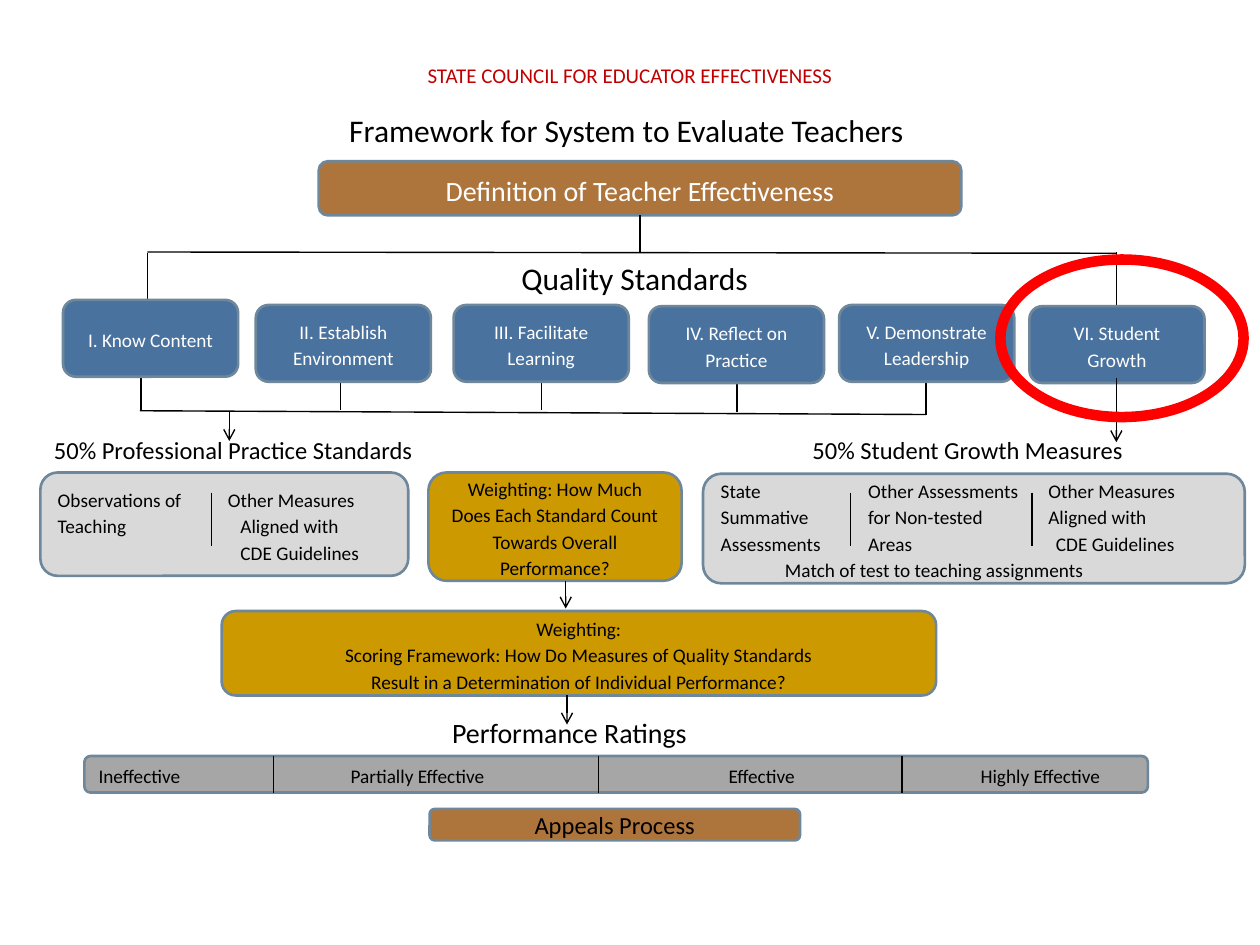
from lxml.etree import SubElement
from pptx import Presentation
from pptx.dml.color import RGBColor
from pptx.enum.shapes import MSO_CONNECTOR, MSO_SHAPE
from pptx.enum.text import MSO_ANCHOR, PP_ALIGN
from pptx.oxml.ns import qn
from pptx.util import Inches, Pt

BLACK = RGBColor(0x00, 0x00, 0x00)
WHITE = RGBColor(0xFF, 0xFF, 0xFF)
CRIMSON = RGBColor(0xC0, 0x00, 0x00)
RED = RGBColor(0xFF, 0x00, 0x00)
BROWN = RGBColor(0xAD, 0x74, 0x3B)
BLUE = RGBColor(0x4A, 0x72, 0x9E)
GOLD = RGBColor(0xCC, 0x99, 0x00)
PALE_GRAY = RGBColor(0xD9, 0xD9, 0xD9)
GRAY = RGBColor(0xA6, 0xA6, 0xA6)
BORDER = RGBColor(0x6E, 0x87, 0x9B)

STANDARDS = [
    (0.5, 2.38, "I. Know Content"),
    (2.03, 2.42, "II. Establish Environment"),
    (3.6, 2.42, "III. Facilitate Learning"),
    (5.15, 2.43, "IV. Reflect on Practice"),
    (6.66, 2.42, "V. Demonstrate Leadership"),
    (8.17, 2.43, "VI. Student Growth"),
]
BRANCHES = [
    (1.17, 2, 8.86, 2.01),
    (1.17, 2.01, 1.17, 2.68),
    (8.86, 2, 8.86, 2.65),
    (5.08, 1.71, 5.08, 2.01),
    (1.12, 3, 1.12, 3.26),
    (1.11, 3.26, 7.35, 3.29),
    (7.35, 3.03, 7.35, 3.29),
    (2.7, 2.99, 2.7, 3.25),
    (4.3, 2.98, 4.3, 3.25),
    (5.85, 3.01, 5.85, 3.27),
]
ARROWS = [
    (8.86, 3, 3.51),
    (1.82, 3.27, 3.5),
    (4.49, 4.61, 4.83),
    (4.5, 5.52, 5.75),
]
PRACTICE_MEASURES = [
    ("Observations of\tOther Measures", [1.35]),
    ("Teaching\tAligned with", [1.45]),
    ("\tCDE Guidelines", [1.45]),
]
GROWTH_MEASURES = [
    ("State\tOther Assessments\tOther Measures", [1.17, 2.6]),
    ("Summative\tfor Non-tested\tAligned with", [1.17, 2.6]),
    ("Assessments\tAreas\tCDE Guidelines", [1.17, 2.66]),
    ("\tMatch of test to teaching assignments", [0.51]),
]
SCORING = [
    "Weighting:",
    "Scoring Framework: How Do Measures of Quality Standards",
    "Result in a Determination of Individual Performance?",
]


def style(paragraph, text, size, color, align, spacing=1.15, tabs=()):
    paragraph.text = text
    paragraph.alignment = align
    paragraph.line_spacing = spacing
    if tabs:
        stops = SubElement(paragraph._p.get_or_add_pPr(), qn("a:tabLst"))
        for stop in tabs:
            SubElement(stops, qn("a:tab"), pos=str(Inches(stop)), algn="l")
    paragraph.font.name = "Calibri"
    paragraph.font.size = Pt(size)
    paragraph.font.color.rgb = color


def write(frame, lines, size, color, align, spacing=1.15):
    frame.word_wrap = True
    for index, line in enumerate(lines):
        paragraph = frame.add_paragraph() if index else frame.paragraphs[0]
        text, tabs = (line, ()) if isinstance(line, str) else line
        style(paragraph, text, size, color, align, spacing, tabs)


def add_card(slide, place, fill, lines, size=11, color=BLACK,
             align=PP_ALIGN.CENTER, spacing=1.15):
    card = slide.shapes.add_shape(MSO_SHAPE.ROUNDED_RECTANGLE, *map(Inches, place))
    card.shadow.inherit = False
    card.fill.solid()
    card.fill.fore_color.rgb = fill
    card.line.color.rgb = BORDER
    card.line.width = Pt(1.5)
    card.text_frame.vertical_anchor = MSO_ANCHOR.MIDDLE
    write(card.text_frame, lines, size, color, align, spacing)


def add_label(slide, place, line, size):
    label = slide.shapes.add_textbox(*map(Inches, place))
    write(label.text_frame, [line], size, BLACK, PP_ALIGN.LEFT, 1.0)


def add_heading(slide):
    frame = slide.shapes.add_textbox(*map(Inches, (2.5, 0.42, 5, 0.82))).text_frame
    frame.word_wrap = True
    council, framework = frame.paragraphs[0], frame.add_paragraph()
    style(council, "STATE COUNCIL FOR EDUCATOR EFFECTIVENESS", 12, CRIMSON, PP_ALIGN.CENTER)
    style(framework, "Framework for System to Evaluate Teachers ", 18, BLACK, PP_ALIGN.CENTER)
    council.space_after = framework.space_after = Pt(10)


def add_line(slide, x1, y1, x2, y2, arrow=False):
    connector = slide.shapes.add_connector(
        MSO_CONNECTOR.STRAIGHT, *map(Inches, (x1, y1, x2, y2)))
    connector.line.color.rgb = BLACK
    connector.line.width = Pt(0.79)
    if arrow:
        SubElement(connector.line._get_or_add_ln(), qn("a:tailEnd"), type="arrow")
    SubElement(connector._element.spPr, qn("a:effectLst"))


def add_highlight(slide):
    ring = slide.shapes.add_shape(MSO_SHAPE.OVAL, *map(Inches, (7.94, 2.06, 1.93, 1.25)))
    ring.shadow.inherit = False
    ring.fill.background()
    ring.line.color.rgb = RED
    ring.line.width = Pt(6)


def main():
    deck = Presentation()
    deck.slide_width, deck.slide_height = Inches(10), Inches(7.5)
    slide = deck.slides.add_slide(deck.slide_layouts[6])

    add_heading(slide)
    add_card(slide, (2.53, 1.28, 5.1, 0.43), BROWN,
             ["Definition of Teacher Effectiveness"], 16, WHITE)
    for branch in BRANCHES:
        add_line(slide, *branch)
    add_label(slide, (4.04, 2.01, 2.02, 0.4), "Quality Standards", 18)
    for left, top, standard in STANDARDS:
        add_card(slide, (left, top, 1.39, 0.61), BLUE, [standard], color=WHITE)

    add_label(slide, (0.33, 3.4, 9.43, 0.34),
              ("50% Professional Practice Standards\t50% Student Growth Measures", [6.02]), 14)
    add_card(slide, (0.32, 3.75, 2.92, 0.82), PALE_GRAY, PRACTICE_MEASURES,
             align=PP_ALIGN.LEFT)
    add_card(slide, (3.4, 3.75, 2.01, 0.86), GOLD,
             ["Weighting: How Much Does Each Standard Count Towards Overall Performance?"])
    add_card(slide, (5.58, 3.76, 4.3, 0.87), PALE_GRAY, GROWTH_MEASURES,
             align=PP_ALIGN.LEFT)
    for x in (1.68, 6.75, 8.19):
        add_line(slide, x, 3.91, x, 4.33)

    add_card(slide, (1.76, 4.85, 5.67, 0.67), GOLD, SCORING)
    add_label(slide, (3.49, 5.63, 2.09, 0.37), "Performance Ratings", 16)
    add_card(slide, (0.67, 6, 8.44, 0.29), GRAY,
             [("Ineffective\tPartially Effective\tEffective\tHighly Effective", [2, 5, 7])],
             align=PP_ALIGN.LEFT)
    for x in (2.17, 4.75, 7.16):
        add_line(slide, x, 6, x, 6.29)
    add_card(slide, (3.41, 6.42, 2.94, 0.25), BROWN, ["Appeals Process"], 14, spacing=1.0)

    for x, start, end in ARROWS:
        add_line(slide, x, start, x, end, arrow=True)
    add_highlight(slide)
    deck.save("out.pptx")


if __name__ == "__main__":
    main()
